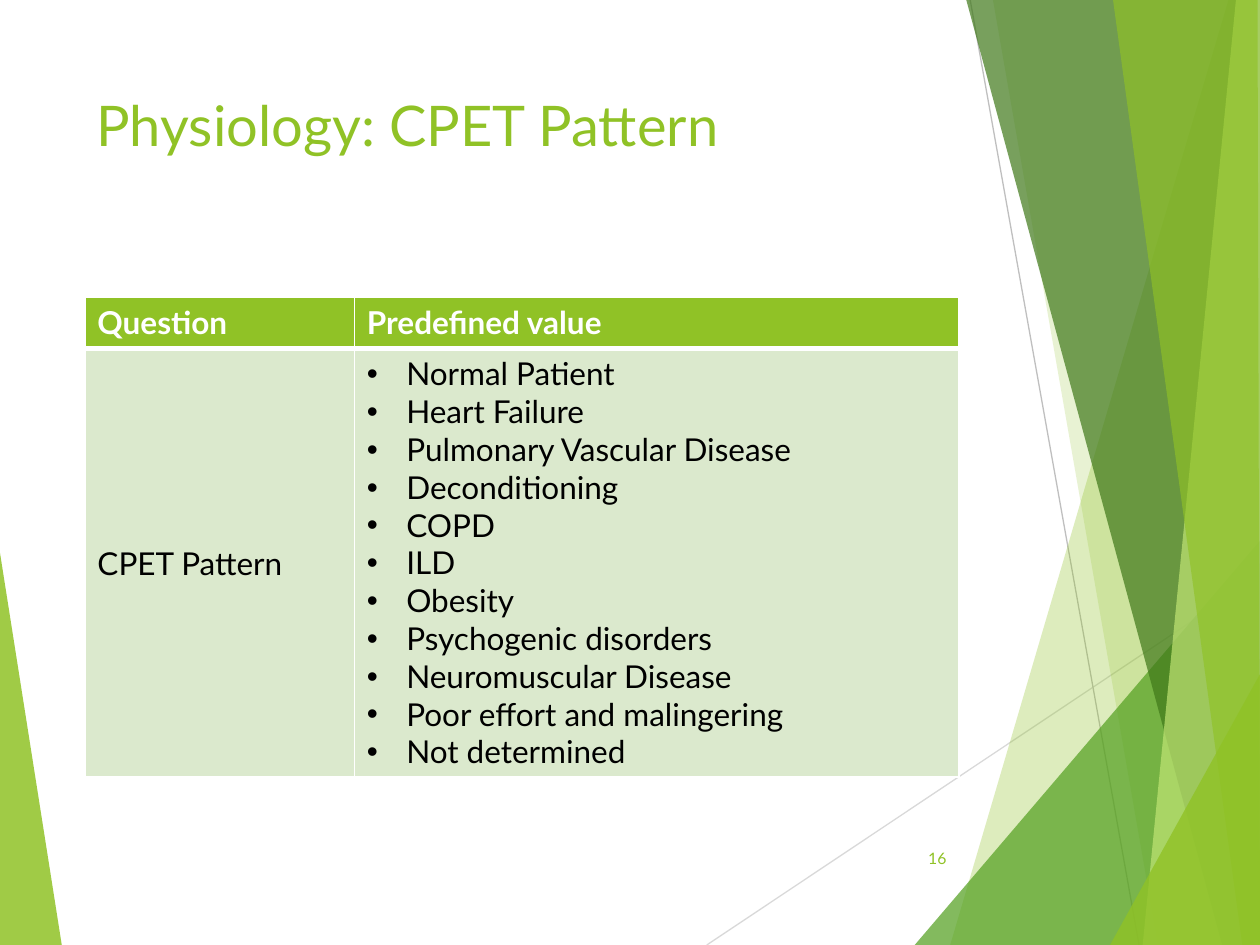
from pptx import Presentation
from pptx.dml.color import RGBColor
from pptx.enum.shapes import MSO_CONNECTOR
from pptx.enum.text import MSO_ANCHOR, PP_ALIGN
from pptx.oxml.ns import qn
from pptx.util import Pt
from lxml.etree import SubElement

WIDE, HIGH = 720, 540
LIME, PALE, WHITE, BLACK = "90C226", "DBE9CD", "FFFFFF", "000000"
BASE = {"name": "Lato", "size": Pt(18), "bold": False}

# Colour, opacity in percent, corner points
SHARDS = [
    (LIME, 85, [(0, 316), (35.3, HIGH), (0, HIGH)]),
    (LIME, 30, [(702, 0), (543, HIGH), (WIDE, HIGH), (WIDE, 0)]),
    (LIME, 20, [(567.4, 0), (661.7, HIGH), (WIDE, HIGH), (WIDE, 0)]),
    ("54A021", 72, [(522.7, HIGH), (WIDE, 309), (WIDE, HIGH)]),
    ("3F7819", 70, [(552.2, 0), (698.4, HIGH), (WIDE, HIGH), (WIDE, 0)]),
    ("C0E474", 70, [(706.3, 0), (653, HIGH), (WIDE, HIGH), (WIDE, 0)]),
    (LIME, 65, [(636, 0), (709.9, HIGH), (WIDE, HIGH), (718.6, 0)]),
    (LIME, 80, [(634.3, HIGH), (WIDE, 385.2), (WIDE, HIGH)]),
]
LINES = [("D9D9D9", (403.9, HIGH, WIDE, 329)), ("BFBFBF", (554.4, 0, 650.9, HIGH))]
VALUES = [
    "Normal Patient", "Heart Failure", "Pulmonary Vascular Disease",
    "Deconditioning", "COPD", "ILD", "Obesity", "Psychogenic disorders",
    "Neuromuscular Disease", "Poor effort and malingering", "Not determined",
]


def paint(color, code):
    color.rgb = RGBColor.from_string(code)


def style(para, code, **extra):
    for key, value in {**BASE, **extra}.items():
        setattr(para.font, key, value)
    paint(para.font.color, code)


def add_shard(slide, code, alpha, points):
    build = slide.shapes.build_freeform(*map(Pt, points[0]), scale=1.0)
    build.add_line_segments([(Pt(x), Pt(y)) for x, y in points[1:]], close=True)
    shard = build.convert_to_shape()
    shard.shadow.inherit = False
    shard.line.fill.background()
    shard.fill.solid()
    paint(shard.fill.fore_color, code)
    tint = shard.fill._xPr.find(".//" + qn("a:srgbClr"))
    SubElement(tint, qn("a:alpha"), val=str(alpha * 1000))


def add_line(slide, code, ends):
    line = slide.shapes.add_connector(MSO_CONNECTOR.STRAIGHT, *map(Pt, ends))
    line.line.width = Pt(0.75)
    paint(line.line.color, code)
    SubElement(line._element.spPr, qn("a:effectLst"))


def add_text(slide, text, box, size, anchor, align):
    frame = slide.shapes.add_textbox(*map(Pt, box)).text_frame
    frame.word_wrap = True
    frame.vertical_anchor = anchor
    para = frame.paragraphs[0]
    para.text, para.alignment = text, align
    style(para, LIME, size=Pt(size))


def add_bullet(para):
    props = para._p.get_or_add_pPr()
    props.set("marL", str(Pt(22.5)))
    props.set("indent", str(Pt(-22.5)))
    SubElement(props, qn("a:buFont"), typeface="Arial")
    SubElement(props, qn("a:buChar"), char="•")


def set_cell(cell, lines, fill, code, bold=False, bullet=False, edges=(1, 1, 1, 1)):
    """Fill one cell; edges are left, right, top and bottom widths."""
    cell.text = "\n".join(lines)
    for para in cell.text_frame.paragraphs:
        if bullet:
            add_bullet(para)
        style(para, code, bold=bold)
    props = cell._tc.get_or_add_tcPr()
    for side, width in zip("LRTB", edges):
        edge = SubElement(props, qn(f"a:ln{side}"), w=str(Pt(width)))
        SubElement(SubElement(edge, qn("a:solidFill")), qn("a:srgbClr"), val=WHITE)
    cell.fill.solid()
    paint(cell.fill.fore_color, fill)


def add_grid(slide):
    table = slide.shapes.add_table(2, 2, Pt(48.5), Pt(170), Pt(499.5), Pt(274)).table
    for part, width in zip(table.columns, (154, 345.5)):
        part.width = Pt(width)
    for part, height in zip(table.rows, (29.2, 244.8)):
        part.height = Pt(height)
    for col, name in enumerate(("Question", "Predefined value")):
        set_cell(table.cell(0, col), [name], LIME, WHITE, bold=True, edges=(1, 1, 1, 3))
    for col, lines in enumerate((["CPET Pattern"], VALUES)):
        set_cell(table.cell(1, col), lines, PALE, BLACK, bullet=col == 1, edges=(1, 1, 3, 1))
    table.cell(1, 0).vertical_anchor = MSO_ANCHOR.MIDDLE


def main():
    deck = Presentation()
    deck.slide_width, deck.slide_height = Pt(WIDE), Pt(HIGH)
    slide = deck.slides.add_slide(deck.slide_layouts[6])
    add_shard(slide, *SHARDS[0])
    for line in LINES:
        add_line(slide, *line)
    for shard in SHARDS[1:]:
        add_shard(slide, *shard)
    add_text(slide, "Physiology: CPET Pattern", (48, 48, 500, 104), 32,
             MSO_ANCHOR.TOP, PP_ALIGN.LEFT)
    add_grid(slide)
    add_text(slide, "16", (507.6, 476, 40.3, 28.8), 9, MSO_ANCHOR.MIDDLE, PP_ALIGN.RIGHT)
    deck.save("out.pptx")


if __name__ == "__main__":
    main()
